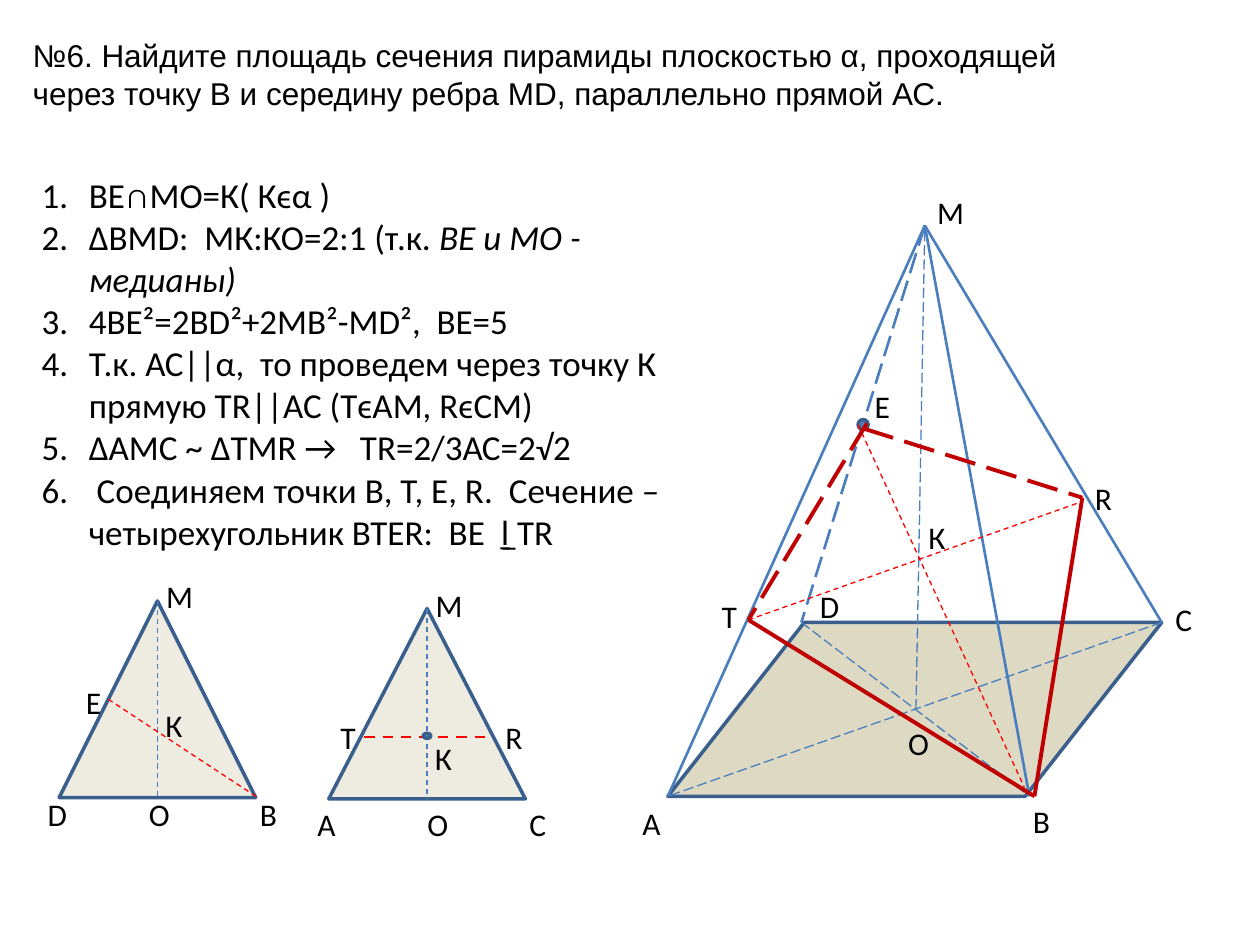
from typing import NamedTuple, Optional

from lxml.etree import SubElement
from pptx import Presentation
from pptx.dml.color import RGBColor
from pptx.enum.dml import MSO_LINE
from pptx.enum.shapes import MSO_CONNECTOR, MSO_SHAPE
from pptx.enum.text import MSO_ANCHOR, MSO_AUTO_SIZE, PP_ALIGN
from pptx.oxml.ns import qn
from pptx.util import Inches, Pt

BLACK = RGBColor(0x00, 0x00, 0x00)
EDGE_BLUE = RGBColor(0x4B, 0x7E, 0xBC)
OUTLINE_BLUE = RGBColor(0x3A, 0x5F, 0x8C)
POINT_BLUE = RGBColor(0x4F, 0x81, 0xBD)
BASE_TAN = RGBColor(0xDD, 0xD9, 0xC3)
TRIANGLE_CREAM = RGBColor(0xEE, 0xEC, 0xE1)
RED = RGBColor(0xFF, 0x00, 0x00)
SECTION_RED = RGBColor(0xC0, 0x00, 0x00)

Point = tuple[float, float]


class Segment(NamedTuple):
    start: Point
    end: Point
    color: RGBColor = EDGE_BLUE
    width: float = 0.75
    dash: Optional[MSO_LINE] = None


class Label(NamedTuple):
    text: str
    left: float
    top: float
    width: float
    height: float = 0.4


class Figure(NamedTuple):
    kind: MSO_SHAPE
    left: float
    top: float
    width: float
    height: float
    fill: RGBColor


def add_run(paragraph, text: str, *, font: str = "Calibri", size: float = 18,
            italic: bool = False) -> None:
    run = paragraph.add_run()
    run.text = text
    run.font.name = font
    run.font.size = Pt(size)
    run.font.italic = italic
    run.font.color.rgb = BLACK


def draw_segment(shapes, segment: Segment) -> None:
    coordinates = [Inches(value) for value in (*segment.start, *segment.end)]
    connector = shapes.add_connector(MSO_CONNECTOR.STRAIGHT, *coordinates)
    connector.line.color.rgb = segment.color
    connector.line.width = Pt(segment.width)
    if segment.dash is not None:
        connector.line.dash_style = segment.dash
    SubElement(connector._element.spPr, qn("a:effectLst"))


def draw_label(shapes, label: Label) -> None:
    box = shapes.add_textbox(*(Inches(value) for value in label[1:]))
    box.text_frame.word_wrap = True
    add_run(box.text_frame.paragraphs[0], label.text)


def draw_figure(shapes, figure: Figure):
    shape = shapes.add_shape(figure.kind, *(Inches(value) for value in figure[1:5]))
    shape.shadow.inherit = False
    shape.fill.solid()
    shape.fill.fore_color.rgb = figure.fill
    shape.line.color.rgb = OUTLINE_BLUE
    shape.line.width = Pt(2)
    return shape


def draw_all(shapes, segments: list[Segment], labels: list[Label]) -> None:
    for segment in segments:
        draw_segment(shapes, segment)
    for label in labels:
        draw_label(shapes, label)


def prepare_placeholder(shape, left: float, top: float, width: float, height: float,
                        *, anchor: MSO_ANCHOR, wrap: bool):
    shape.left, shape.top = Inches(left), Inches(top)
    shape.width, shape.height = Inches(width), Inches(height)
    frame = shape.text_frame
    frame.auto_size = MSO_AUTO_SIZE.NONE
    frame.vertical_anchor = anchor
    frame.word_wrap = wrap
    return frame


def next_paragraph(frame, index: int):
    paragraph = frame.paragraphs[0] if index == 0 else frame.add_paragraph()
    paragraph.alignment = PP_ALIGN.LEFT
    paragraph.space_before = Pt(0)
    return paragraph


def write_title(shape) -> None:
    frame = prepare_placeholder(shape, 0.16, 0.23, 8.47, 0.71,
                                anchor=MSO_ANCHOR.MIDDLE, wrap=False)
    lines = [
        "№6. Найдите площадь сечения пирамиды плоскостью α, проходящей",
        "через точку В и середину ребра МD, параллельно прямой АС.",
    ]
    for index, line in enumerate(lines):
        add_run(next_paragraph(frame, index), line, font="Arial")


def write_solution(shape) -> None:
    frame = prepare_placeholder(shape, 0.23, 1.33, 5.63, 4.04,
                                anchor=MSO_ANCHOR.TOP, wrap=True)
    steps = [
        ("ВЕ∩МО=К( Кϵα )", ""),
        ("ΔВМD:  МК:КО=2:1 (т.к", ". ВЕ и МО - медианы)"),
        ("4ВЕ²=2ВD²+2МВ²-МD²,  ВЕ=5", ""),
        ("Т.к. АС||α,  то проведем через точку К прямую TR||AC (ТϵАМ, RϵСМ)", ""),
        ("ΔАМС ~ ΔТМR →   ТR=2/3АС=2√2", ""),
        (" Соединяем точки В, Т, Е, R.  Сечение – четырехугольник ВТЕR:  ВЕ  ḻ̲ ТR", ""),
    ]
    for index, (statement, remark) in enumerate(steps):
        paragraph = next_paragraph(frame, index)
        add_run(paragraph, statement, size=20)
        if remark:
            add_run(paragraph, remark, size=20, italic=True)
        properties = paragraph._p.get_or_add_pPr()
        properties.set("marL", str(Inches(0.375)))
        properties.set("indent", str(Inches(-0.375)))
        SubElement(properties, qn("a:buFont"), typeface="+mj-lt")
        SubElement(properties, qn("a:buAutoNum"), type="arabicPeriod")


def draw_pyramid(slide) -> None:
    shapes = slide.shapes.add_group_shape().shapes
    apex, a, b, c, d = (7.34, 1.79), (5.3, 6.32), (8.17, 6.32), (9.22, 4.94), (6.36, 4.94)
    center = (7.27, 5.63)
    base = draw_figure(shapes, Figure(MSO_SHAPE.PARALLELOGRAM, 5.3, 4.94, 3.92, 1.38, BASE_TAN))
    base.adjustments[0] = 0.785
    hidden = MSO_LINE.LONG_DASH
    segments = [Segment(*ends, dash=hidden) for ends in ((d, b), (c, a), (center, apex))]
    segments.append(Segment(apex, d, width=1.5, dash=hidden))
    segments += [Segment(apex, corner, width=1.5) for corner in (a, c, b)]
    draw_all(shapes, segments, [
        Label("М", 7.34, 1.48, 0.53),
        Label("А", 5, 6.33, 0.3),
        Label("D", 6.41, 4.61, 0.23),
        Label("В", 8.1, 6.32, 0.23),
        Label("С", 9.23, 4.71, 0.3),
        Label("Е", 6.89, 3.02, 0.15),
        Label("О", 7.11, 5.7, 0.3),
    ])
    draw_figure(shapes, Figure(MSO_SHAPE.OVAL, 6.81, 3.33, 0.08, 0.08, POINT_BLUE))


def draw_section(slide) -> None:
    t, r, b = (5.94, 4.92), (8.59, 3.95), (8.21, 6.32)
    draw_all(slide.shapes, [
        Segment((6.81, 3.37), (8.13, 6.25), RED, dash=MSO_LINE.DASH),
        Segment(t, (8.59, 3.98), RED, dash=MSO_LINE.DASH),
        Segment((6.88, 3.36), t, SECTION_RED, 2.25, MSO_LINE.LONG_DASH),
        Segment((6.85, 3.4), r, SECTION_RED, 2.25, MSO_LINE.LONG_DASH),
        Segment(r, b, SECTION_RED, 2.25),
        Segment(t, b, SECTION_RED, 2.25),
    ], [
        Label("К", 7.27, 4.06, 0.23),
        Label("Т", 5.63, 4.69, 0.23),
        Label("R", 8.59, 3.75, 0.31),
    ])


def draw_triangle(slide, left: float, top: float, height: float, chord: Segment,
                  labels: list[Label]):
    shapes = slide.shapes.add_group_shape().shapes
    side = 1.56
    middle = left + side / 2
    draw_figure(shapes, Figure(MSO_SHAPE.ISOSCELES_TRIANGLE, left, top, side, height, TRIANGLE_CREAM))
    median = Segment((middle, top), (middle, top + height), dash=MSO_LINE.DASH)
    draw_all(shapes, [median, chord], labels)
    return shapes


def main() -> None:
    presentation = Presentation()
    presentation.slide_width, presentation.slide_height = Inches(10), Inches(7.5)
    slide = presentation.slides.add_slide(presentation.slide_layouts[1])
    write_title(slide.shapes.title)
    write_solution(slide.placeholders[1])
    draw_pyramid(slide)
    draw_section(slide)
    draw_triangle(slide, 0.47, 4.77, 1.56, Segment((0.86, 5.55), (2.03, 6.32), RED, dash=MSO_LINE.DASH), [
        Label("D", 0.28, 6.26, 0.25, 0.31), Label("М", 1.22, 4.53, 0.25, 0.31),
        Label("В", 1.97, 6.26, 0.19, 0.31), Label("О", 1.09, 6.26, 0.19, 0.31),
        Label("Е", 0.59, 5.37, 0.19, 0.39), Label("К", 1.22, 5.55, 0.19, 0.31),
    ])
    shapes = draw_triangle(slide, 2.61, 4.83, 1.51, Segment((2.89, 5.85), (3.91, 5.85), RED, 1.5, MSO_LINE.DASH), [
        Label("М", 3.36, 4.6, 0.25, 0.3), Label("А", 2.42, 6.34, 0.25, 0.3),
        Label("С", 4.11, 6.34, 0.19, 0.3), Label("О", 3.3, 6.34, 0.19, 0.3),
        Label("К", 3.36, 5.82, 0.19, 0.3), Label("Т", 2.61, 5.65, 0.19, 0.3),
        Label("R", 3.92, 5.65, 0.19, 0.3),
    ])
    draw_figure(shapes, Figure(MSO_SHAPE.OVAL, 3.36, 5.82, 0.06, 0.04, POINT_BLUE))
    presentation.save("out.pptx")


if __name__ == "__main__":
    main()
